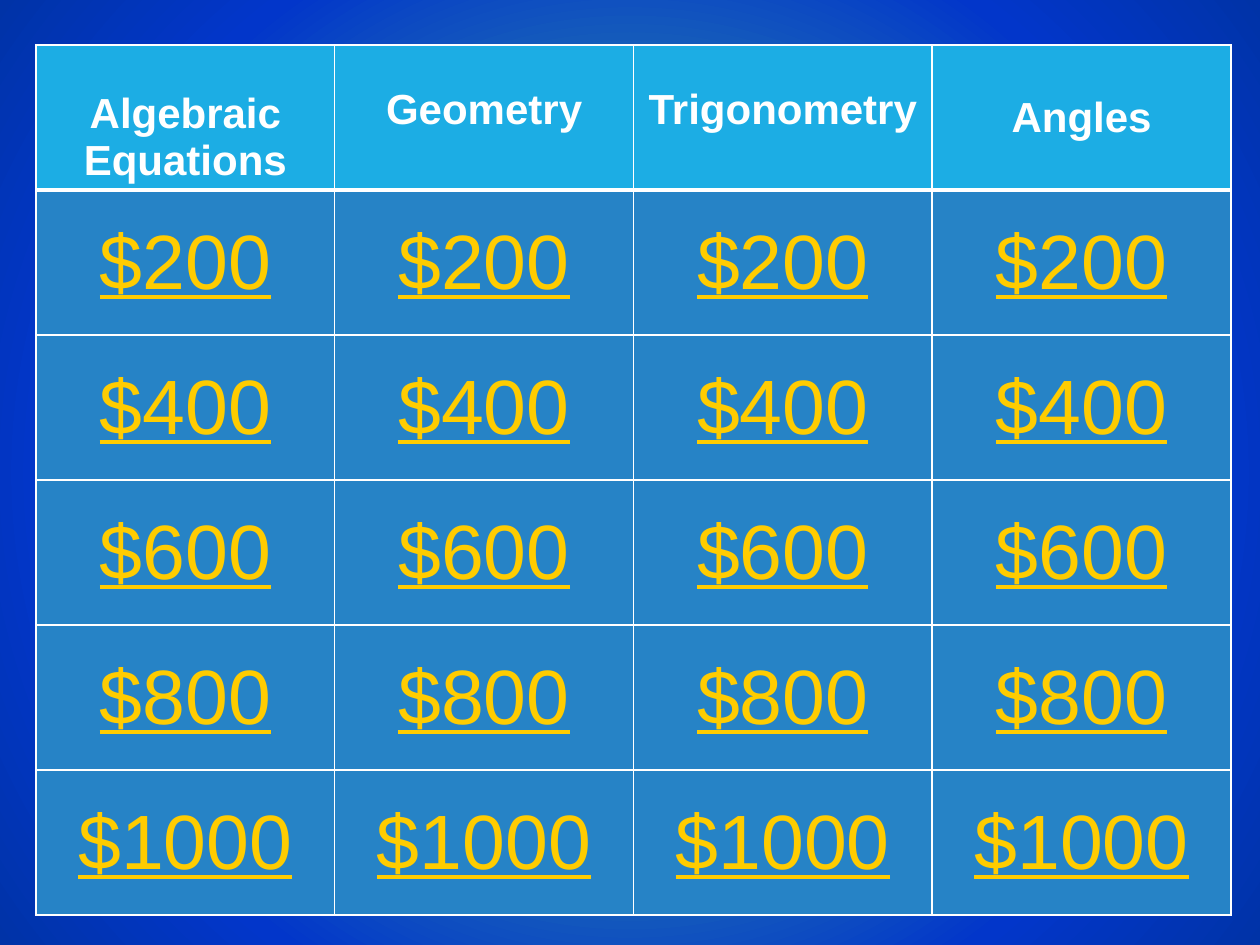
from dataclasses import dataclass

from lxml.etree import SubElement
from pptx import Presentation
from pptx.dml.color import RGBColor
from pptx.enum.text import MSO_ANCHOR, PP_ALIGN
from pptx.oxml.ns import qn
from pptx.util import Pt


@dataclass(frozen=True)
class Theme:
    font: str = "Arial"
    white: str = "FFFFFF"
    header: str = "1CADE4"
    body: str = "2683C6"
    amount: str = "FFCC00"
    glow: tuple = ((0, "429CDA"), (41, "2275B0"), (74, "0236CA"), (100, "0033A7"))
    header_size: int = 24
    amount_size: int = 44


def px(n):
    return round(n * 914400 / 126)


def add_borders(cell, bottom):
    """Draw white cell borders; must run before the cell's fill is set."""
    tc_pr = cell._tc.get_or_add_tcPr()
    for side, width in (("L", 1), ("R", 1), ("T", 1), ("B", bottom)):
        ln = SubElement(tc_pr, qn(f"a:ln{side}"), w=str(Pt(width)))
        fill = SubElement(ln, qn("a:solidFill"))
        SubElement(fill, qn("a:srgbClr"), val=theme.white)


theme = Theme()
prs = Presentation()
prs.slide_width, prs.slide_height = px(1260), px(945)
s = prs.slides.add_slide(prs.slide_layouts[6])

# Background: circular glow from the centre
s.background.fill.gradient()
grad = s.element.find(".//" + qn("a:gradFill"))
for child in list(grad):
    grad.remove(child)
stops = SubElement(grad, qn("a:gsLst"))
for pos, color in theme.glow:
    stop = SubElement(stops, qn("a:gs"), pos=str(pos * 1000))
    SubElement(stop, qn("a:srgbClr"), val=color)
circle = SubElement(grad, qn("a:path"), path="circle")
SubElement(circle, qn("a:fillToRect"), l="50000", t="50000", r="50000", b="50000")

# Game board: topics above rows of amounts
topics = ["Algebraic Equations", "Geometry", "Trigonometry", "Angles"]
topic_tops = [46, 42, 42, None]  # None: centred vertically
amounts = [200, 400, 600, 800, 1000]
rows = [topics] + [[f"${amount}"] * len(topics) for amount in amounts]

board = s.shapes.add_table(len(rows), len(topics), px(36), px(45), px(1195), px(870)).table
for row in board.rows:
    row.height = px(145)

for r_index, texts in enumerate(rows):
    is_header = r_index == 0
    for c_index, text in enumerate(texts):
        cell = board.cell(r_index, c_index)
        add_borders(cell, bottom=3 if is_header else 1)
        cell.fill.solid()
        cell.fill.fore_color.rgb = RGBColor.from_string(theme.header if is_header else theme.body)
        cell.vertical_anchor = MSO_ANCHOR.MIDDLE
        if is_header and topic_tops[c_index]:
            cell.vertical_anchor = MSO_ANCHOR.TOP
            cell.margin_top, cell.margin_bottom = px(topic_tops[c_index]), 0

        p = cell.text_frame.paragraphs[0]
        p.text = text
        p.alignment = PP_ALIGN.CENTER
        font = p.runs[0].font
        font.name = theme.font
        font.size = Pt(theme.header_size if is_header else theme.amount_size)
        font.bold = is_header
        font.underline = not is_header
        font.color.rgb = RGBColor.from_string(theme.white if is_header else theme.amount)

prs.save("out.pptx")
